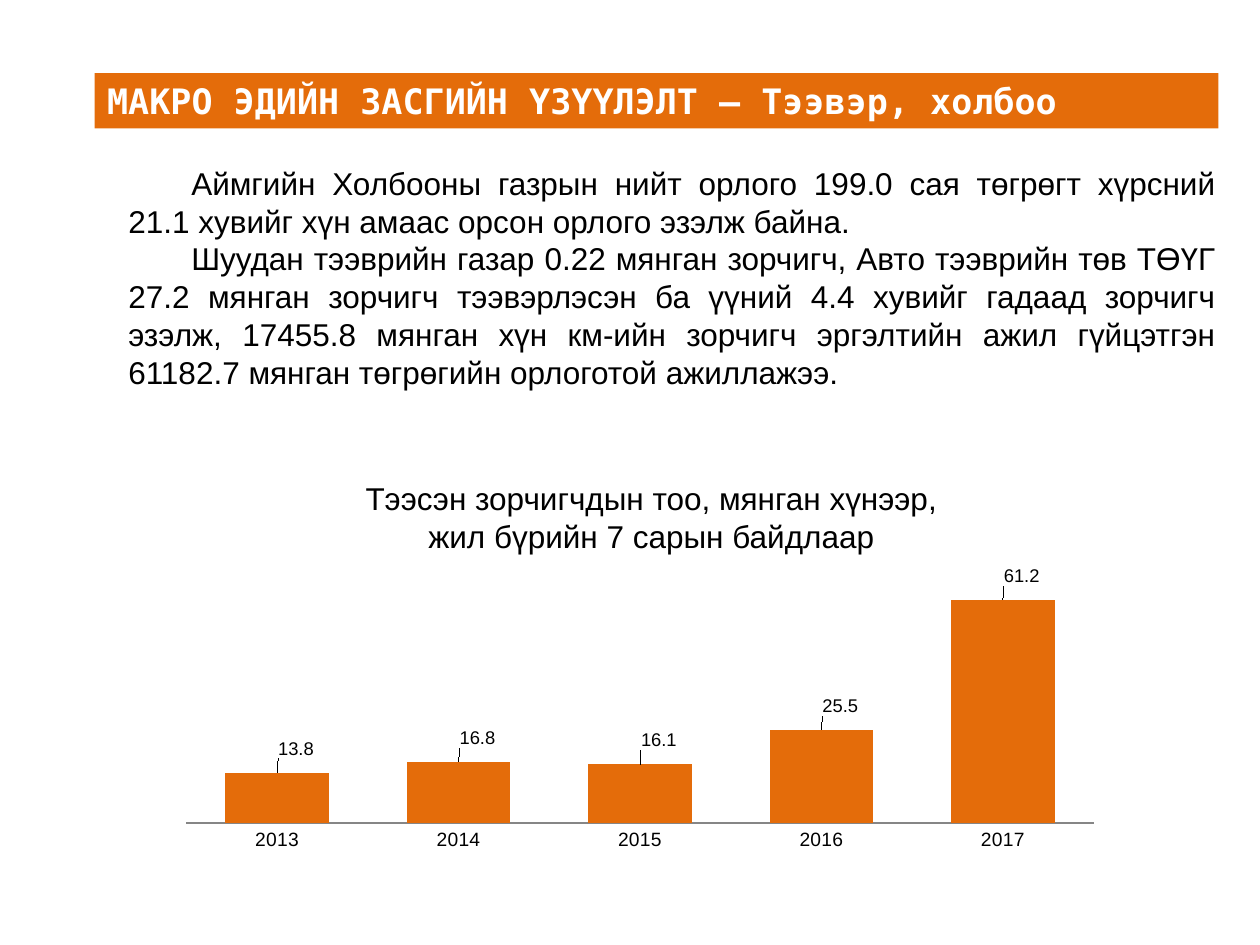
"""Build the transport and communications slide of the macro indicators."""
from lxml.etree import SubElement
from pptx import Presentation
from pptx.chart.data import CategoryChartData
from pptx.dml.color import RGBColor
from pptx.enum.chart import XL_CHART_TYPE, XL_LABEL_POSITION, XL_TICK_MARK
from pptx.enum.text import MSO_ANCHOR, MSO_AUTO_SIZE, PP_ALIGN
from pptx.oxml.ns import qn
from pptx.util import Inches, Pt

ORANGE = RGBColor(0xE4, 0x6C, 0x0A)
BLACK = RGBColor(0, 0, 0)
WHITE = RGBColor(0xFF, 0xFF, 0xFF)
GRAY = RGBColor(0x86, 0x86, 0x86)

BODY = [
    "\tАймгийн Холбооны газрын нийт орлого 199.0 сая төгрөгт хүрсний 21.1 хувийг "
    "хүн амаас орсон орлого эзэлж байна.",
    "\tШуудан тээврийн газар 0.22 мянган зорчигч, Авто тээврийн төв ТӨҮГ 27.2 мянган "
    "зорчигч тээвэрлэсэн ба үүний 4.4 хувийг гадаад зорчигч эзэлж, 17455.8 мянган хүн "
    "км-ийн зорчигч эргэлтийн ажил гүйцэтгэн 61182.7 мянган төгрөгийн орлоготой ажиллажээ.",
]
HEADING = ["Тээсэн зорчигчдын тоо, мянган хүнээр,", "жил бүрийн 7 сарын байдлаар"]
RIDERS = {"2013": 13.8, "2014": 16.8, "2015": 16.1, "2016": 25.5, "2017": 61.2}


def add_text(slide, lines, left, top, width, height, align):
    box = slide.shapes.add_textbox(Inches(left), Inches(top), Inches(width), Inches(height))
    frame = box.text_frame
    frame.word_wrap = True
    frame.text = "\n".join(lines)
    for para in frame.paragraphs:
        para.alignment = align
        font = para.runs[0].font
        font.name, font.size = "Arial", Pt(18)
        font.color.rgb = BLACK


def set_layout(layout, **items):
    manual = SubElement(layout, qn("c:manualLayout"))
    for tag, value in items.items():
        SubElement(manual, qn(f"c:{tag}")).set("val", str(value))


prs = Presentation()
prs.slide_width, prs.slide_height = Inches(10), Inches(7.5)
slide = prs.slides.add_slide(prs.slide_layouts[5])

title = slide.shapes.title
title.left, title.top = Inches(0.75), Inches(0.58)
title.width, title.height = Inches(8.92), Inches(0.44)
title.fill.solid()
title.fill.fore_color.rgb = ORANGE
frame = title.text_frame
frame.text = "МАКРО ЭДИЙН ЗАСГИЙН ҮЗҮҮЛЭЛТ – Тээвэр, холбоо"
frame.auto_size = MSO_AUTO_SIZE.NONE
frame.vertical_anchor = MSO_ANCHOR.MIDDLE
para = frame.paragraphs[0]
para.alignment = PP_ALIGN.LEFT
font = para.runs[0].font
font.name, font.size, font.bold = "DejaVu Sans Mono", Pt(20), True
font.color.rgb = WHITE

add_text(slide, BODY, 0.92, 1.25, 8.83, 1.92, PP_ALIGN.JUSTIFY)
add_text(slide, HEADING, 2.67, 3.75, 5, 0.71, PP_ALIGN.CENTER)

data = CategoryChartData(number_format="0.0")
data.categories = list(RIDERS)
data.add_series("Series 1", list(RIDERS.values()))
chart = slide.shapes.add_chart(
    XL_CHART_TYPE.COLUMN_CLUSTERED,
    Inches(1.33), Inches(4.46), Inches(7.5), Inches(2.33), data,
).chart
chart.has_legend = False
chart.has_title = False
chart.font.name, chart.font.size = "Arial", Pt(10)
chart.font.color.rgb = BLACK

years = chart.category_axis
years.major_tick_mark = XL_TICK_MARK.NONE
years.tick_labels.font.size = Pt(11)
years.format.line.color.rgb = GRAY
scale = chart.value_axis
scale.visible = False
scale.has_major_gridlines = False
scale.minimum_scale, scale.maximum_scale = 0, 70

area = chart.plots[0]
area.gap_width = 75
area.vary_by_categories = False
bars = area.series[0]
bars.format.fill.solid()
bars.format.fill.fore_color.rgb = ORANGE
for index in range(len(RIDERS)):
    label = bars.points[index].data_label
    label.font.size = Pt(10.5)
    label.font.color.rgb = BLACK
    label.position = XL_LABEL_POSITION.OUTSIDE_END
for item in bars.data_labels._element.findall(qn("c:dLbl")):
    layout = SubElement(item, qn("c:layout"))
    item.insert(1, layout)
    set_layout(layout, x=0.02, y=-0.03)

plot = chart._chartSpace.chart.plotArea
layout = plot.find(qn("c:layout"))
if layout is None:
    layout = SubElement(plot, qn("c:layout"))
    plot.insert(0, layout)
set_layout(layout, layoutTarget="inner", xMode="edge", yMode="edge",
           x=0.02, y=0.02, w=0.96, h=0.87)

prs.save("out.pptx")
